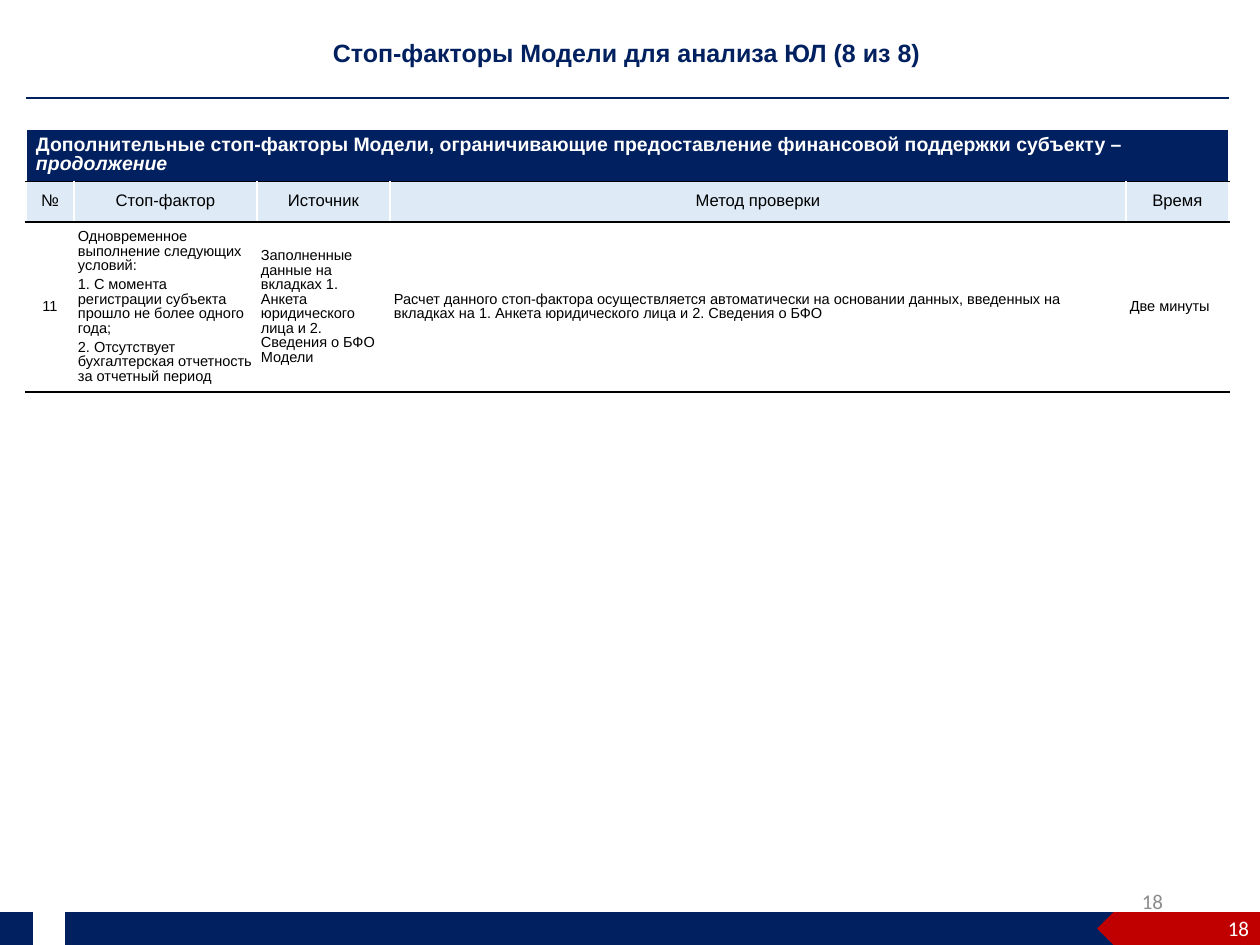
from lxml.etree import SubElement
from pptx import Presentation
from pptx.dml.color import RGBColor
from pptx.enum.shapes import MSO_CONNECTOR, MSO_SHAPE
from pptx.enum.text import MSO_ANCHOR as Anchor, MSO_AUTO_SIZE as AutoSize, PP_ALIGN as Align
from pptx.oxml.ns import qn
from pptx.util import Inches, Pt

COLORS = {"navy": "002060", "red": "C00000", "pale": "DEEBF7",
          "white": "FFFFFF", "black": "000000", "gray": "8C8C8C"}
COLUMNS = [0.48, 1.83, 1.33, 7.36, 1.03]
ROWS = [0.51, 0.41, 1.7]
HEADINGS = ["№", "Стоп-фактор", "Источник", "Метод проверки", "Время"]
FACTOR = [
    ["11"],
    ["Одновременное выполнение следующих условий:",
     "1. С момента регистрации субъекта прошло не более одного года;",
     "2. Отсутствует бухгалтерская отчетность за отчетный период"],
    ["Заполненные данные на вкладках 1. Анкета юридического лица и 2. Сведения о БФО Модели"],
    ["Расчет данного стоп-фактора осуществляется автоматически на основании данных, "
     "введенных на вкладках на 1. Анкета юридического лица и 2. Сведения о БФО"],
    ["Две минуты"],
]
BANNER = ("Дополнительные стоп-факторы Модели, ограничивающие предоставление "
          "финансовой поддержки субъекту – ")


def assign(target, values):
    """Set each attribute of the target from a dict."""
    for name, value in values.items():
        setattr(target, name, value)


def color(name):
    """Return the named colour."""
    return RGBColor.from_string(COLORS[name])


class SlideBuilder:
    """Holds the style and the current slide."""

    def __init__(self, deck):
        """Add a title-only slide to the deck."""
        self.page = deck.slides.add_slide(deck.slide_layouts[5])

    def span(self, para, text, size, tint, font="Arial", bold=False, italic=False):
        """Add a formatted run to a paragraph."""
        span = para.add_run()
        span.text = text
        assign(span.font, {"name": font, "size": Pt(size), "bold": bold, "italic": italic})
        span.font.color.rgb = color(tint)

    def title(self, text, left, top, width, height):
        """Place and format the title."""
        box = self.page.shapes.title
        assign(box, {"left": Inches(left), "top": Inches(top),
                     "width": Inches(width), "height": Inches(height)})
        assign(box.text_frame, {"word_wrap": True, "auto_size": AutoSize.NONE,
                                "vertical_anchor": Anchor.TOP})
        para = box.text_frame.paragraphs[0]
        assign(para, {"alignment": Align.CENTER, "line_spacing": 0.8,
                      "space_before": Pt(0), "space_after": Pt(4)})
        self.span(para, text, 18, "navy", bold=True)

    def page_number(self, text, left, top, tint):
        """Add a right-aligned page number."""
        box = self.page.shapes.add_textbox(Inches(left), Inches(top), Inches(2.83), Inches(0.5))
        assign(box.text_frame, {"word_wrap": True, "vertical_anchor": Anchor.MIDDLE})
        para = box.text_frame.paragraphs[0]
        para.alignment = Align.RIGHT
        self.span(para, text, 15.1, tint, font="Calibri")

    def rule(self, left, right, top):
        """Add a horizontal line."""
        line = self.page.shapes.add_connector(
            MSO_CONNECTOR.STRAIGHT, Inches(left), Inches(top), Inches(right), Inches(top))
        line.line.width = Pt(1.75)
        line.line.color.rgb = color("navy")
        SubElement(line._element.spPr, qn("a:effectLst"))

    def band(self, left, width, tint, point):
        """Add a left-pointing footer band."""
        shape = self.page.shapes.add_shape(
            MSO_SHAPE.PENTAGON, Inches(left), Inches(9.12), Inches(width), Inches(0.33))
        shape.rotation = 180
        shape.adjustments[0] = point
        shape.shadow.inherit = False
        shape.fill.solid()
        shape.fill.fore_color.rgb = color(tint)
        shape.line.fill.background()

    def borders(self, cell, top):
        """Draw white sides and a black base, with the given top colour."""
        edges = {"lnL": "white", "lnR": "white", "lnT": top, "lnB": "black"}
        for edge, tint in edges.items():
            line = SubElement(cell._tc.get_or_add_tcPr(), qn(f"a:{edge}"), w=str(Pt(1)))
            SubElement(SubElement(line, qn("a:solidFill")), qn("a:srgbClr"), val=COLORS[tint])

    def cell(self, cell, paragraphs, fill, size, centered=False, tint="black", bold=False,
             top="black", margins=(0.1, 0.05)):
        """Fill a table cell with paragraphs."""
        self.borders(cell, top)
        cell.fill.solid()
        cell.fill.fore_color.rgb = color(fill)
        side, edge = map(Inches, margins)
        assign(cell, {"vertical_anchor": Anchor.MIDDLE, "margin_left": side,
                      "margin_right": side, "margin_top": edge, "margin_bottom": edge})
        for index, text in enumerate(paragraphs):
            frame = cell.text_frame
            para = frame.add_paragraph() if index else frame.paragraphs[0]
            assign(para, {"alignment": Align.CENTER if centered else Align.LEFT,
                          "line_spacing": 0.9, "space_after": Pt(3)})
            self.span(para, text, size, tint, bold=bold)

    def table(self, left, top):
        """Add the stop-factor table."""
        table = self.page.shapes.add_table(
            len(ROWS), len(COLUMNS), Inches(left), Inches(top),
            Inches(sum(COLUMNS)), Inches(sum(ROWS))).table
        assign(table, {"first_row": False, "horz_banding": False})
        for column, width in zip(table.columns, COLUMNS):
            column.width = Inches(width)
        for row, height in zip(table.rows, ROWS):
            row.height = Inches(height)
        banner = table.cell(0, 0)
        banner.merge(table.cell(0, len(COLUMNS) - 1))
        self.cell(banner, [BANNER], "navy", 14, tint="white", bold=True, top="white")
        self.span(banner.text_frame.paragraphs[0], "продолжение", 14, "white",
                  bold=True, italic=True)
        for index, (heading, paragraphs) in enumerate(zip(HEADINGS, FACTOR)):
            self.cell(table.cell(1, index), [heading], "pale", 12, centered=True)
            self.cell(table.cell(2, index), paragraphs, "white", 10.5,
                      centered=index == 0, margins=(0.04, 0.02))


def main():
    """Build and save the deck."""
    deck = Presentation()
    assign(deck, {"slide_width": Inches(12.6), "slide_height": Inches(9.45)})
    slide = SlideBuilder(deck)
    slide.page_number("18", 8.9, 8.76, "gray")
    slide.title("Стоп-факторы Модели для анализа ЮЛ (8 из 8) ", 0, 0.38, 12.6, 0.34)
    slide.table(0.26, 1.29)
    slide.rule(0.26, 12.29, 0.98)
    slide.band(0.65, 10.82, "navy", 0)
    slide.band(10.97, 1.63, "red", 0.5)
    slide.band(0, 0.33, "navy", 0)
    slide.page_number("18", 9.76, 9.03, "white")
    deck.save("out.pptx")


if __name__ == "__main__":
    main()
